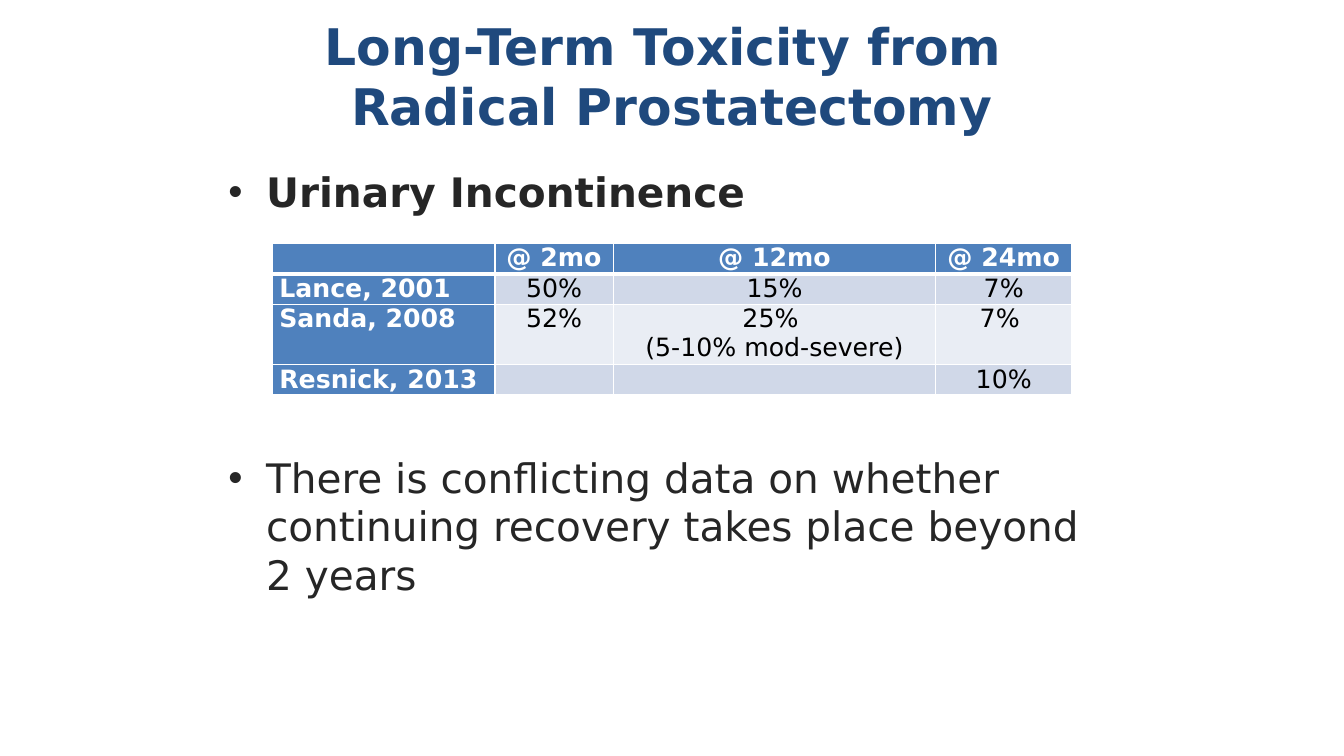
import pptx
import pptx.dml.color
import pptx.enum.text
import pptx.oxml.ns
import pptx.util
from lxml import etree

Pt = pptx.util.Pt
ALIGN = pptx.enum.text.PP_ALIGN
ANCHOR = pptx.enum.text.MSO_ANCHOR
FONT = "DejaVu Sans"
NAVY, BLUE, DARK, BLACK, WHITE = "1F497D", "4F81BD", "262626", "000000", "FFFFFF"
BANDS = ("D0D8E8", "E9EDF4")

INCONTINENCE = [
    ["", "@ 2mo", "@ 12mo", "@ 24mo"],
    ["Lance, 2001", "50%", "15%", "7%"],
    ["Sanda, 2008", "52%", "25% \n(5-10% mod-severe)", "7% "],
    ["Resnick, 2013", "", "", "10%"],
]
COLUMN_WIDTHS = (159, 84.5, 230.5, 97)
LINE_HEIGHT = 21


def color(hex_value):
    return pptx.dml.color.RGBColor.from_string(hex_value)


def sub(parent, tag, **attributes):
    return etree.SubElement(parent, pptx.oxml.ns.qn(tag), attributes)


def write(paragraph, text, size, fill, bold=False, align=ALIGN.LEFT):
    paragraph.alignment = align
    if not text:
        # An empty cell keeps the line height of its row
        sub(paragraph._p, "a:endParaRPr", sz=str(size * 100))
        return
    paragraph.text = text
    for run in paragraph.runs:
        run.font.name = FONT
        run.font.size = Pt(size)
        run.font.bold = bold
        run.font.color.rgb = color(fill)


def text_frame(slide, left, top, width, height, anchor=ANCHOR.TOP):
    frame = slide.shapes.add_textbox(Pt(left), Pt(top), Pt(width), Pt(height)).text_frame
    frame.word_wrap = True
    frame.vertical_anchor = anchor
    return frame


def add_title(slide, left, top, width, height):
    frame = text_frame(slide, left, top, width, height, ANCHOR.MIDDLE)
    write(frame.paragraphs[0], "Long-Term Toxicity from \vRadical Prostatectomy",
          size=36, fill=NAVY, bold=True, align=ALIGN.CENTER)


def add_bullets(slide, left, top, width, height, table_gap):
    frame = text_frame(slide, left, top, width, height)
    heading, finding = frame.paragraphs[0], frame.add_paragraph()
    for bullet in (heading, finding):
        properties = bullet._p.get_or_add_pPr()
        properties.set("marL", str(Pt(27)))
        properties.set("indent", str(-Pt(27)))
        sub(properties, "a:buFont", typeface="Arial")
        sub(properties, "a:buChar", char="•")
    finding.space_before = Pt(table_gap)
    write(heading, "Urinary Incontinence", size=29, fill=DARK, bold=True)
    write(finding, "There is conflicting data on whether continuing recovery "
          "takes place beyond 2 years", size=29, fill=DARK)


def set_borders(cell, top, bottom):
    properties = cell._tc.get_or_add_tcPr()
    for position, (side, width) in enumerate(
            (("a:lnL", 1), ("a:lnR", 1), ("a:lnT", top), ("a:lnB", bottom))):
        line = sub(properties, side, w=str(Pt(width)))
        sub(sub(line, "a:solidFill"), "a:srgbClr", val=WHITE)
        properties.insert(position, line)


def add_incontinence_table(slide, left, top):
    line_counts = [max(text.count("\n") + 1 for text in row) for row in INCONTINENCE]
    table = slide.shapes.add_table(
        len(INCONTINENCE), len(COLUMN_WIDTHS), Pt(left), Pt(top),
        Pt(sum(COLUMN_WIDTHS)), Pt(LINE_HEIGHT * sum(line_counts))).table
    for column, width in zip(table.columns, COLUMN_WIDTHS):
        column.width = Pt(width)
    for r, (row, lines) in enumerate(zip(INCONTINENCE, line_counts)):
        table.rows[r].height = Pt(LINE_HEIGHT * lines)
        for c, text in enumerate(row):
            cell = table.cell(r, c)
            is_header = r == 0 or c == 0
            cell.margin_left = cell.margin_right = Pt(5)
            cell.margin_top = cell.margin_bottom = 0
            cell.fill.solid()
            cell.fill.fore_color.rgb = color(BLUE if is_header else BANDS[(r - 1) % 2])
            set_borders(cell, top=3 if r == 1 else 1, bottom=3 if r == 0 else 1)
            for i, line in enumerate(text.split("\n")):
                paragraph = cell.text_frame.add_paragraph() if i else cell.text_frame.paragraphs[0]
                write(paragraph, line, size=18, fill=WHITE if is_header else BLACK,
                      bold=is_header, align=ALIGN.CENTER if c else ALIGN.LEFT)


def main():
    deck = pptx.Presentation()
    deck.slide_width, deck.slide_height = Pt(960), Pt(540)
    slide = deck.slides.add_slide(deck.slide_layouts[6])
    add_bullets(slide, left=156, top=116, width=648, height=324, table_gap=169)
    add_incontinence_table(slide, left=194.5, top=174)
    add_title(slide, left=120, top=0, width=720, height=108)
    deck.save("out.pptx")


if __name__ == "__main__":
    main()
